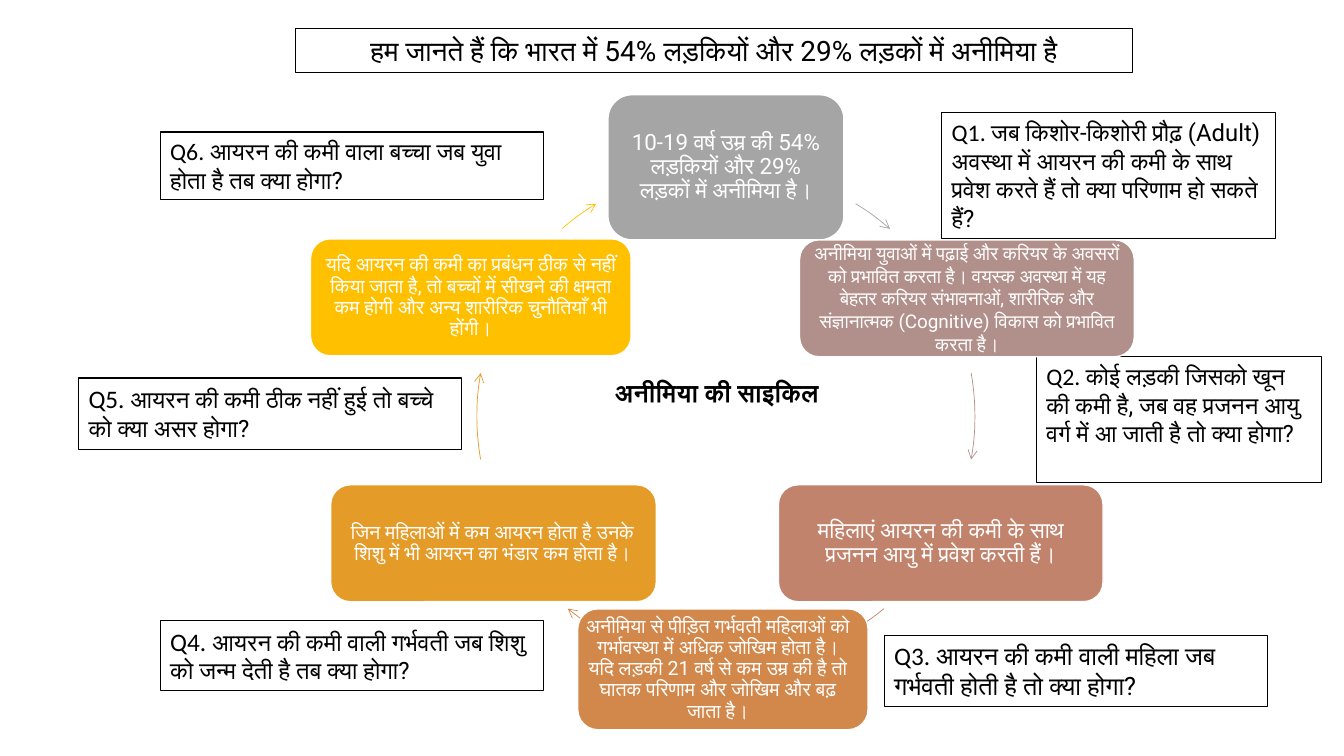
from dataclasses import dataclass

from lxml import etree
from pptx import Presentation
from pptx.dml.color import RGBColor
from pptx.enum import shapes, text
from pptx.oxml import ns
from pptx.util import Inches, Pt

BLACK = RGBColor(0x00, 0x00, 0x00)
WHITE = RGBColor(0xFF, 0xFF, 0xFF)
GREY = RGBColor(0xA5, 0xA5, 0xA5)
MAUVE = RGBColor(0xB1, 0x8F, 0x8A)
CLAY = RGBColor(0xC1, 0x83, 0x6C)
COPPER = RGBColor(0xD2, 0x88, 0x4B)
AMBER = RGBColor(0xE5, 0x9B, 0x27)
GOLD = RGBColor(0xFF, 0xC0, 0x00)

ADJUSTMENT_PER_DEGREE = 0.6


@dataclass
class Box:
    left: float
    top: float
    width: float
    height: float

    def lengths(self) -> tuple:
        return tuple(Inches(v) for v in (self.left, self.top, self.width, self.height))


@dataclass
class Stage:
    box: Box
    color: RGBColor
    size: float
    words: str
    spacing: float = 0.9
    left_inset: float = 0.07
    right_inset: float = 0.07


@dataclass
class Question:
    box: Box
    label_size: float
    size: float
    words: str


@dataclass
class Arc:
    start: float
    end: float
    color: RGBColor


CYCLE = Box(4.73, 1.66, 4.94, 4.94)

STAGES = [
    Stage(Box(6.03, 0.94, 2.34, 1.44), GREY, 16,
          "10-19 वर्ष उम्र की 54% लड़कियों और 29% लड़कों में अनीमिया है।",
          left_inset=0.15, right_inset=0.15),
    Stage(Box(7.93, 2.38, 3.32, 1.16), MAUVE, 13.5,
          "अनीमिया युवाओं में पढ़ाई और करियर के अवसरों को प्रभावित करता है। वयस्क अवस्था में यह "
          "बेहतर करियर संभावनाओं, शारीरिक और संज्ञानात्मक (Cognitive) विकास को प्रभावित करता है।",
          1.0, 0.06, 0.06),
    Stage(Box(7.72, 4.81, 3.22, 1.16), CLAY, 16,
          "महिलाएं आयरन की कमी के साथ प्रजनन आयु में प्रवेश करती हैं।"),
    Stage(Box(5.73, 6.04, 2.88, 1.2), COPPER, 14,
          "अनीमिया से पीड़ित गर्भवती महिलाओं को गर्भावस्था में अधिक जोखिम होता है। "
          "यदि लड़की 21 वर्ष से कम उम्र की है तो घातक परिणाम और जोखिम और बढ़ जाता है।",
          left_inset=0.02, right_inset=0.12),
    Stage(Box(3.28, 4.81, 3.23, 1.16), AMBER, 14,
          "जिन महिलाओं में कम आयरन होता है उनके शिशु में भी आयरन का भंडार कम होता है।",
          left_inset=0.02, right_inset=0.04),
    Stage(Box(3.08, 2.37, 3.18, 1.16), GOLD, 14,
          "यदि आयरन की कमी का प्रबंधन ठीक से नहीं किया जाता है, तो बच्चों में सीखने की क्षमता "
          "कम होगी और अन्य शारीरिक चुनौतियाँ भी होंगी।"),
]

QUESTIONS = [
    Question(Box(9.34, 1.12, 3.31, 1.25), 17, 17,
             "जब किशोर-किशोरी प्रौढ़ (Adult) अवस्था में आयरन की कमी के साथ प्रवेश करते हैं "
             "तो क्या परिणाम हो सकते हैं?"),
    Question(Box(10.28, 3.54, 2.83, 1.25), 17, 17,
             "कोई लड़की जिसको खून की कमी है, जब वह प्रजनन आयु वर्ग में आ जाती है तो क्या होगा?"),
    Question(Box(8.77, 6.3, 3.8, 0.71), 18, 18,
             "आयरन की कमी वाली महिला जब गर्भवती होती है तो क्या होगा?"),
    Question(Box(1.59, 6.16, 3.8, 0.69), 18, 17,
             "आयरन की कमी वाली गर्भवती जब शिशु को जन्म देती है तब क्या होगा?"),
    Question(Box(0.78, 3.75, 3.8, 0.71), 18, 17,
             "आयरन की कमी ठीक नहीं हुई तो बच्चे को क्या असर होगा?"),
    Question(Box(1.59, 1.31, 3.8, 0.67), 17, 17,
             "आयरन की कमी वाला बच्चा जब युवा होता है तब क्या होगा?"),
]

ARCS = [
    Arc(301.4, 311.2, GREY),
    Arc(350, 10, MAUVE),
    Arc(50.6, 66, CLAY),
    Arc(114, 129.4, COPPER),
    Arc(170, 190, AMBER),
    Arc(228.8, 238.6, GOLD),
]


def format_run(r, size: float, color: RGBColor, font: str = "Roboto", bold: bool = False) -> None:
    r.font.size = Pt(size)
    r.font.name = font
    r.font.bold = bold
    r.font.color.rgb = color
    etree.SubElement(r.font._element, ns.qn("a:cs"), typeface=font)


def outline(sp, color: RGBColor, width: float) -> None:
    sp.line.color.rgb = color
    sp.line.width = Pt(width)


def place_title(s, words: str) -> None:
    sp = s.shapes.title
    sp.left, sp.top, sp.width, sp.height = Box(2.93, 0.28, 8.3, 0.44).lengths()
    outline(sp, BLACK, 0.75)
    tf = sp.text_frame
    tf.text = words
    tf.auto_size = text.MSO_AUTO_SIZE.NONE
    tf.vertical_anchor = text.MSO_ANCHOR.TOP
    p = tf.paragraphs[0]
    p.alignment = text.PP_ALIGN.CENTER
    p.line_spacing = 1.0
    p.space_before = Pt(0)
    format_run(p.runs[0], 20, BLACK)


def draw_arc(s, arc: Arc) -> None:
    sp = s.shapes.add_shape(shapes.MSO_SHAPE.ARC, *CYCLE.lengths())
    sp.adjustments[0] = arc.start * ADJUSTMENT_PER_DEGREE
    sp.adjustments[1] = arc.end * ADJUSTMENT_PER_DEGREE
    sp.shadow.inherit = False
    sp.fill.background()
    outline(sp, arc.color, 0.5)
    etree.SubElement(sp.line._get_or_add_ln(), ns.qn("a:tailEnd"), type="arrow")


def draw_question(s, number: int, question: Question) -> None:
    sp = s.shapes.add_shape(shapes.MSO_SHAPE.RECTANGLE, *question.box.lengths())
    sp.shadow.inherit = False
    sp.fill.background()
    outline(sp, BLACK, 0.75)
    tf = sp.text_frame
    tf.word_wrap = True
    tf.vertical_anchor = text.MSO_ANCHOR.TOP
    p = tf.paragraphs[0]
    p.text = f"Q{number}. "
    p.alignment = text.PP_ALIGN.LEFT
    format_run(p.runs[0], question.label_size, BLACK, "Calibri")
    r = p.add_run()
    r.text = question.words
    format_run(r, question.size, BLACK)


def draw_stage(s, stage: Stage) -> None:
    sp = s.shapes.add_shape(shapes.MSO_SHAPE.ROUNDED_RECTANGLE, *stage.box.lengths())
    sp.shadow.inherit = False
    sp.fill.solid()
    sp.fill.fore_color.rgb = stage.color
    outline(sp, WHITE, 1)
    tf = sp.text_frame
    tf.text = stage.words
    tf.word_wrap = True
    tf.vertical_anchor = text.MSO_ANCHOR.MIDDLE
    tf.margin_left, tf.margin_right = Inches(stage.left_inset), Inches(stage.right_inset)
    tf.margin_top = tf.margin_bottom = Inches(0.07)
    p = tf.paragraphs[0]
    p.alignment = text.PP_ALIGN.CENTER
    p.line_spacing = stage.spacing
    format_run(p.runs[0], stage.size, WHITE)


def draw_cycle_name(s, words: str) -> None:
    tf = s.shapes.add_textbox(*Box(5.67, 3.69, 2.88, 0.4).lengths()).text_frame
    tf.text = words
    tf.word_wrap = True
    p = tf.paragraphs[0]
    p.alignment = text.PP_ALIGN.CENTER
    format_run(p.runs[0], 18, BLACK, bold=True)


def main() -> None:
    prs = Presentation()
    prs.slide_width, prs.slide_height = Inches(13.33), Inches(7.5)
    s = prs.slides.add_slide(prs.slide_layouts[5])
    place_title(s, "हम जानते हैं कि भारत में 54% लड़कियों और 29% लड़कों में अनीमिया है")
    for arc in ARCS:
        draw_arc(s, arc)
    for number, question in enumerate(QUESTIONS, 1):
        draw_question(s, number, question)
    draw_cycle_name(s, "अनीमिया की साइकिल")
    for stage in STAGES:
        draw_stage(s, stage)
    prs.save("out.pptx")


if __name__ == "__main__":
    main()
